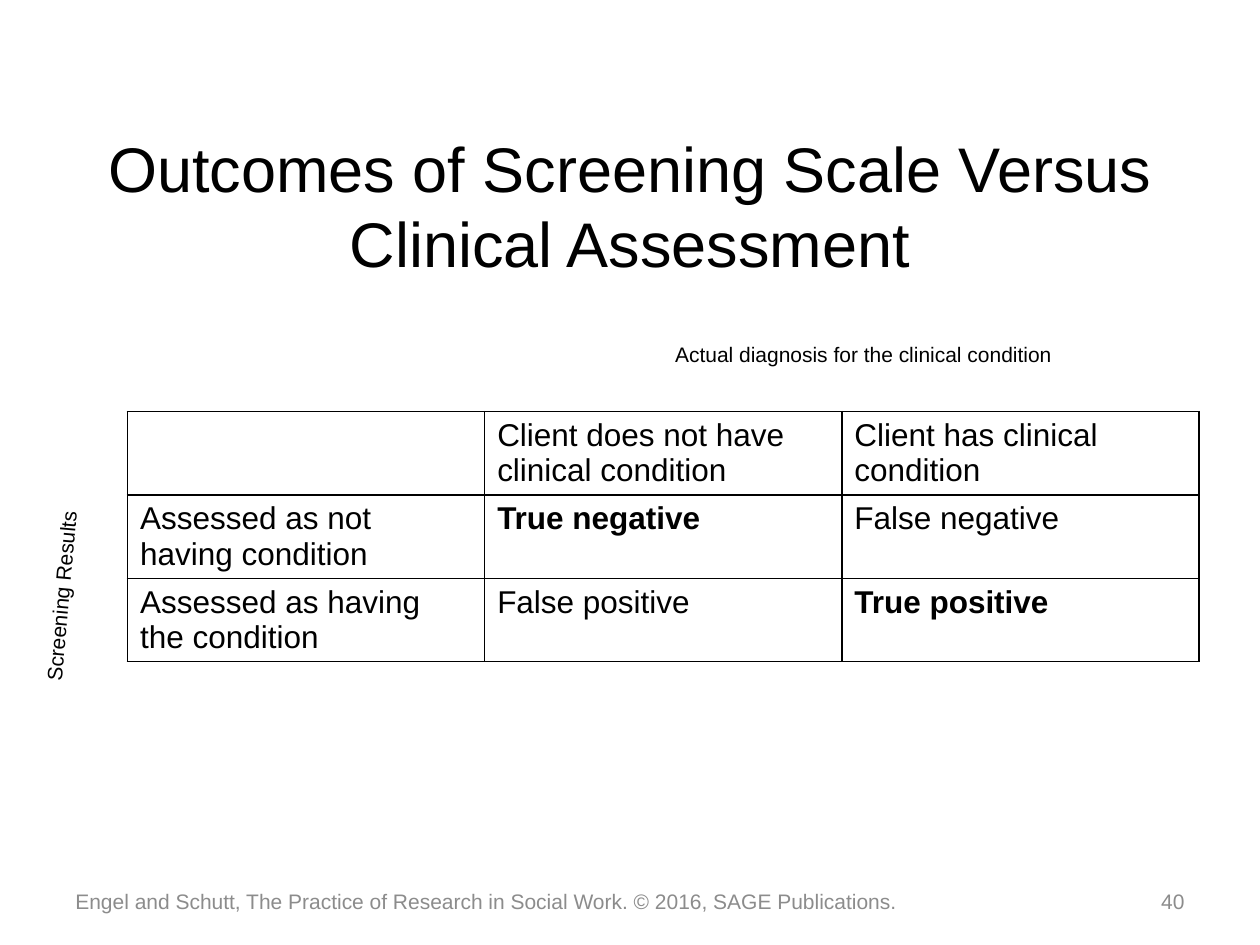
from lxml.etree import SubElement
from pptx import Presentation
from pptx.dml.color import RGBColor
from pptx.enum.text import MSO_ANCHOR as Anchor, MSO_AUTO_SIZE as AutoSize, PP_ALIGN as Align
from pptx.oxml.ns import qn
from pptx.util import Cm, Pt

BLACK, GREY = "000000", "8C8C8C"


def color(hex_code):
    return RGBColor.from_string(hex_code)


def write(frame, text, size, hex_code=BLACK, bold=False, align=Align.LEFT):
    paragraph = frame.paragraphs[0]
    paragraph.alignment = align
    run = paragraph.add_run()
    run.text = text
    run.font.name = "Arial"
    run.font.size = Pt(size)
    run.font.bold = bold
    run.font.color.rgb = color(hex_code)


presentation = Presentation()
presentation.slide_width, presentation.slide_height = Cm(25.4), Cm(19.05)
slide = presentation.slides.add_slide(presentation.slide_layouts[5])

# Title
title = slide.shapes.title
title.left, title.top, title.width, title.height = Cm(1.27), Cm(2.75), Cm(22.86), Cm(2.75)
title.text_frame.vertical_anchor = Anchor.MIDDLE
title.text_frame.auto_size = AutoSize.NONE
write(title.text_frame, "Outcomes of Screening Scale Versus Clinical Assessment", 36,
      align=Align.CENTER)

# Outcome table: the correct outcomes are bold
outcomes = [
    ["", "Client does not have clinical condition", "Client has clinical condition"],
    ["Assessed as not having condition", "True negative", "False negative"],
    ["Assessed as having the condition", "False positive", "True positive"],
]
column_width, row_height = Cm(7.2), Cm(1.68)
table = slide.shapes.add_table(3, 3, Cm(2.57), Cm(8.3), 3 * column_width, 3 * row_height).table
table.first_row = table.horz_banding = False
for column in table.columns:
    column.width = column_width
for row, texts in zip(table.rows, outcomes):
    row.height = row_height
    for cell, text in zip(row.cells, texts):
        if text:
            write(cell.text_frame, text, 18, bold=text.startswith("True"))
        # Borders come before the fill in the cell properties
        properties = cell._tc.get_or_add_tcPr()
        for side in ("a:lnL", "a:lnR", "a:lnT", "a:lnB"):
            line = SubElement(properties, qn(side), w=str(Pt(1)))
            fill = SubElement(line, qn("a:solidFill"))
            SubElement(fill, qn("a:srgbClr"), val=BLACK)
        cell.fill.background()

# Axis labels, footer and page number
labels = [
    ("Actual diagnosis for the clinical condition", 13.36, 6.76, 9.53, 0.76, 0,
     BLACK, Align.LEFT, Anchor.TOP),
    ("Screening Results", -0.97, 11.38, 4.45, 0.76, 275.1, BLACK, Align.LEFT, Anchor.TOP),
    ("Engel and Schutt, The Practice of Research in Social Work. © 2016, SAGE Publications.",
     1.27, 17.65, 21.39, 1.02, 0, GREY, Align.LEFT, Anchor.MIDDLE),
    ("40", 22.89, 17.65, 1.24, 1.02, 0, GREY, Align.RIGHT, Anchor.MIDDLE),
]
for text, left, top, width, height, rotation, hex_code, align, anchor in labels:
    box = slide.shapes.add_textbox(Cm(left), Cm(top), Cm(width), Cm(height))
    box.rotation = rotation
    box.text_frame.word_wrap = True
    box.text_frame.vertical_anchor = anchor
    write(box.text_frame, text, 12, hex_code, align=align)

presentation.save("out.pptx")
